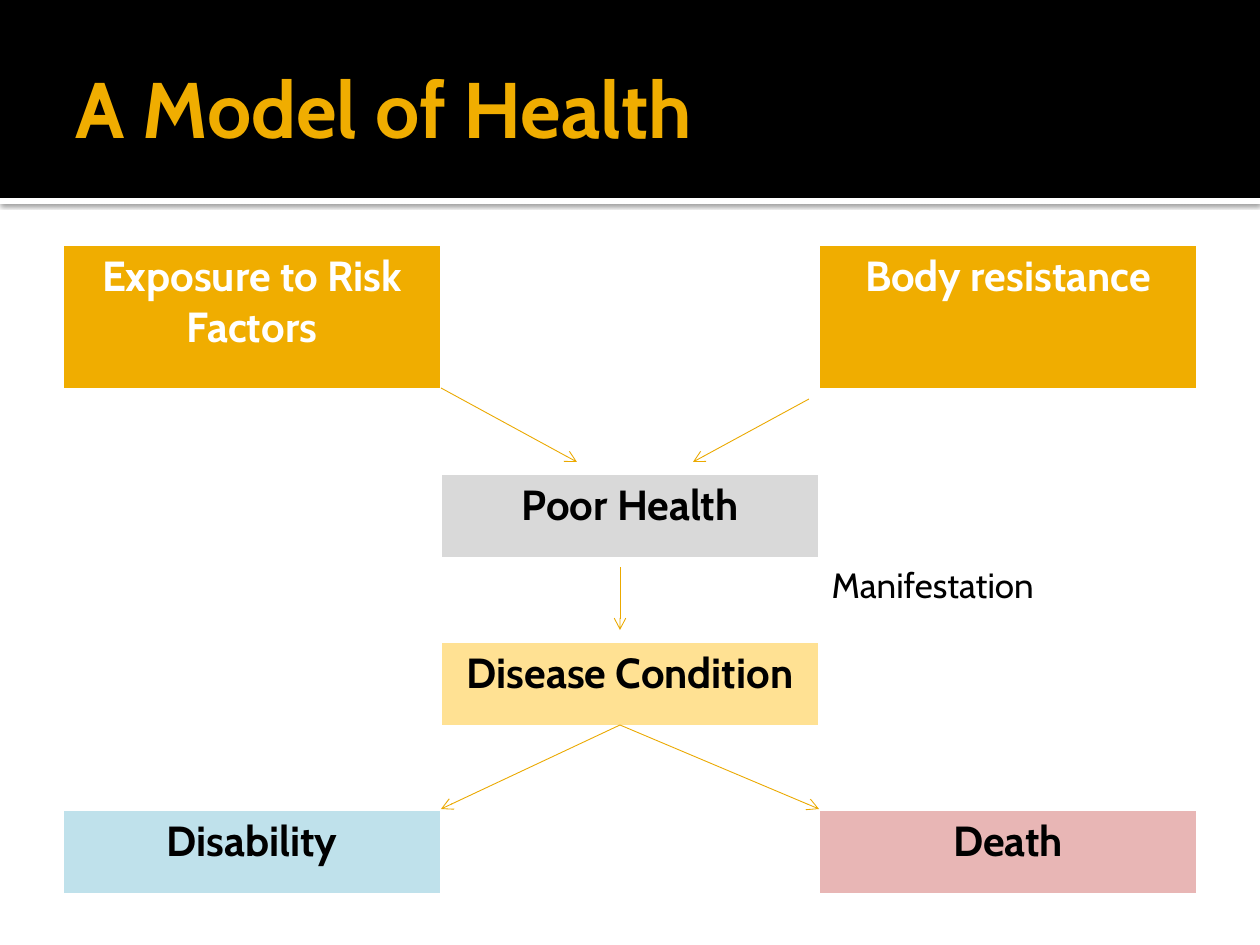
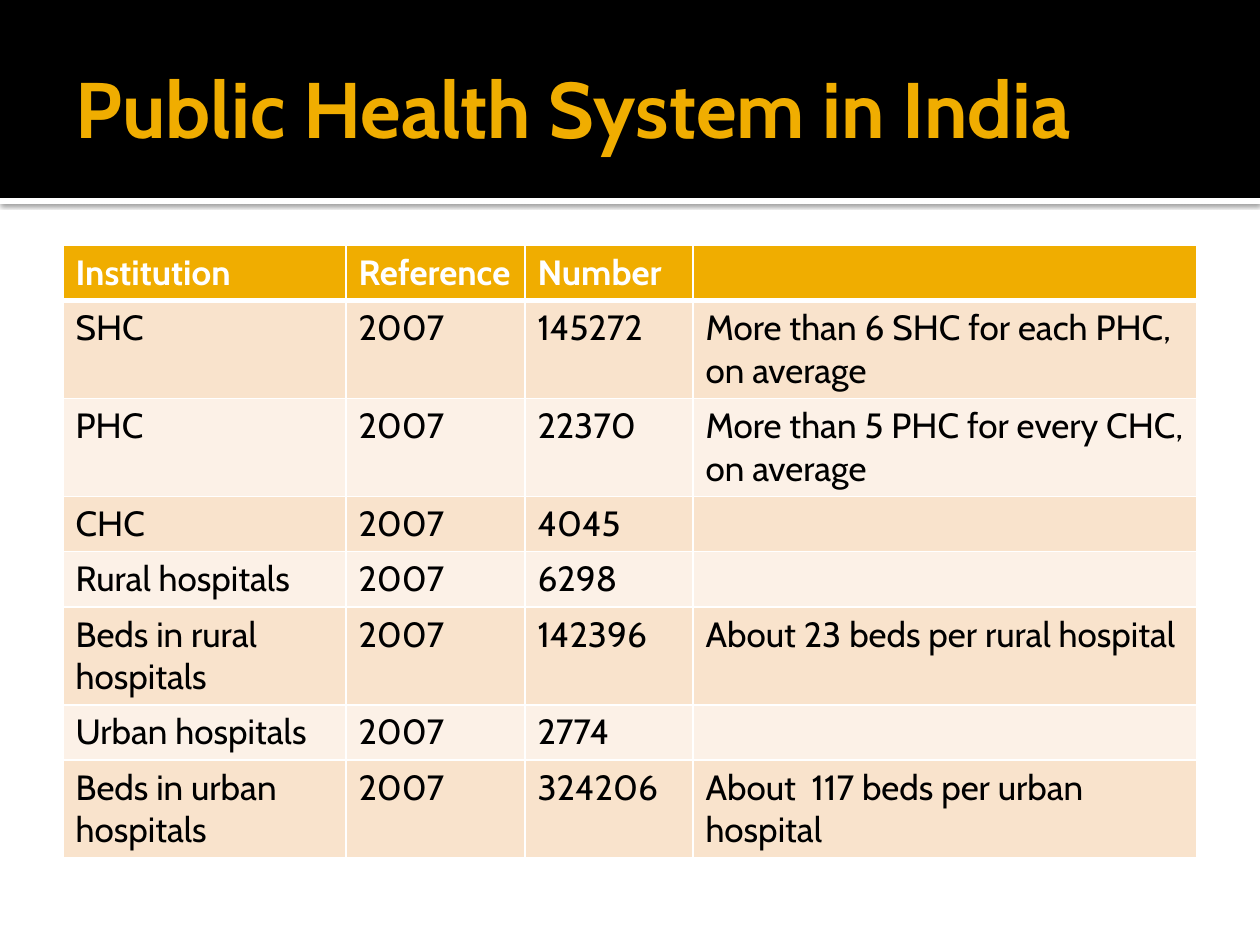
from dataclasses import dataclass

from lxml.etree import SubElement
from pptx import Presentation
from pptx.dml.color import RGBColor
from pptx.enum.shapes import MSO_CONNECTOR, MSO_SHAPE
from pptx.enum.text import MSO_ANCHOR, PP_ALIGN
from pptx.oxml.ns import qn
from pptx.util import Emu, Pt

PIXELS_PER_INCH = 126
FONT = "Cabin"
BLACK, WHITE, AMBER = "000000", "FFFFFF", "F0AD00"
ARROW_COLOUR = "EBA900"
BAND_COLOURS = ("F9E3CC", "FCF1E7")
PAGE_WIDTH, PAGE_HEIGHT = 1260, 945
TABLE_LEFT, TABLE_TOP = 63, 245
HEADER_HEIGHT = 198


@dataclass(frozen=True)
class Cell:
    text: str = ""
    fill: str | None = None
    colour: str = BLACK
    size: int = 20
    bold: bool = False
    align: PP_ALIGN = PP_ALIGN.LEFT


@dataclass(frozen=True)
class Arrow:
    start_x: int
    start_y: int
    end_x: int
    end_y: int


def px(length: int) -> Emu:
    return Emu(round(length * 914400 / PIXELS_PER_INCH))


def rgb(colour: str) -> RGBColor:
    return RGBColor.from_string(colour)


def style_font(font, size: int, colour: str, bold: bool) -> None:
    font.name, font.size, font.bold = FONT, Pt(size), bold
    font.color.rgb = rgb(colour)


def add_band(page, top: int, height: int, colour: str):
    band = page.shapes.add_shape(MSO_SHAPE.RECTANGLE, 0, px(top), px(PAGE_WIDTH), px(height))
    band.fill.solid()
    band.fill.fore_color.rgb = rgb(colour)
    band.line.fill.background()
    band.shadow.inherit = False
    return band


def add_shadow(band) -> None:
    effects = band.element.spPr.find(qn("a:effectLst"))
    shadow = SubElement(effects, qn("a:outerShdw"), blurRad=str(Pt(2.5)), dist=str(Pt(0.8)),
                        dir="5400000", algn="tl", rotWithShape="0")
    colour = SubElement(shadow, qn("a:srgbClr"), val=BLACK)
    SubElement(colour, qn("a:alpha"), val="60000")


def move_to_layout(bands: list, layout) -> None:
    first = layout.placeholders[0].element
    for number, band in enumerate(bands, start=20):
        band.element.nvSpPr.cNvPr.set("id", str(number))
        first.addprevious(band.element)


def set_title(page, text: str) -> None:
    title = page.shapes.title
    title.left, title.top, title.width, title.height = px(63), px(21), px(1134), px(173)
    frame = title.text_frame
    frame.text = text
    frame.vertical_anchor = MSO_ANCHOR.MIDDLE
    frame.margin_left = Emu(91440)
    frame.margin_right = frame.margin_top = frame.margin_bottom = Emu(45720)
    para = frame.paragraphs[0]
    para.alignment = PP_ALIGN.LEFT
    style_font(para.font, 45, AMBER, True)


def set_borders(table_cell, bottom_width: int) -> None:
    properties = table_cell._tc.get_or_add_tcPr()
    for side, width in (("L", 1), ("R", 1), ("T", 1), ("B", bottom_width)):
        line = SubElement(properties, qn(f"a:ln{side}"), w=str(Pt(width)))
        SubElement(SubElement(line, qn("a:solidFill")), qn("a:srgbClr"), val=WHITE)


def add_grid(page, widths: list[int], heights: list[int], rows: list[list[Cell]]) -> None:
    frame = page.shapes.add_table(len(heights), len(widths), px(TABLE_LEFT), px(TABLE_TOP),
                                  px(sum(widths)), px(sum(heights)))
    table = frame.table
    table.first_row = table.horz_banding = False
    for column, width in zip(table.columns, widths):
        column.width = px(width)
    for row, height in zip(table.rows, heights):
        row.height = px(height)
    for row_index, cells in enumerate(rows):
        for column_index, cell in enumerate(cells):
            box = table.cell(row_index, column_index)
            set_borders(box, 3 if row_index == 0 else 1)
            if cell.fill:
                box.fill.solid()
                box.fill.fore_color.rgb = rgb(cell.fill)
            else:
                box.fill.background()
            box.text = cell.text
            para = box.text_frame.paragraphs[0]
            para.alignment = cell.align
            style_font(para.font, cell.size, cell.colour, cell.bold)


def add_arrow(page, arrow: Arrow) -> None:
    connector = page.shapes.add_connector(MSO_CONNECTOR.STRAIGHT, px(arrow.start_x), px(arrow.start_y),
                                          px(arrow.end_x), px(arrow.end_y))
    connector.line.color.rgb = rgb(ARROW_COLOUR)
    connector.line.width = Pt(0.5)
    properties = connector.element.spPr
    SubElement(properties.find(qn("a:ln")), qn("a:tailEnd"), type="arrow")
    SubElement(properties, qn("a:effectLst"))


def stage(text: str, fill: str, colour: str = BLACK) -> Cell:
    return Cell(text, fill, colour, 24, True, PP_ALIGN.CENTER)


def build_health_model(page) -> None:
    set_title(page, "A Model of Health")
    gap = Cell()
    rows = [
        [stage("Exposure to Risk Factors", AMBER, WHITE), gap, stage("Body resistance", AMBER, WHITE)],
        [gap] * 3,
        [gap, stage("Poor Health", "D9D9D9"), gap],
        [gap, gap, Cell("Manifestation")],
        [gap, stage("Disease Condition", "FFE193"), gap],
        [gap] * 3,
        [stage("Disability", "BFE1EB"), gap, stage("Death", "E8B6B5")],
    ]
    add_grid(page, [378] * 3, [145] + [84] * 6, rows)
    for arrow in (
        Arrow(441, 388, 577, 462),
        Arrow(809, 399, 693, 462),
        Arrow(620, 567, 620, 630),
        Arrow(620, 725, 441, 809),
        Arrow(620, 725, 819, 809),
    ):
        add_arrow(page, arrow)


def build_institutions(page) -> None:
    set_title(page, "Public Health System in India")
    headings = ("Institution", "Reference", "Number", "")
    institutions = [
        ("SHC", "145272", "More than 6 SHC for each PHC, on average"),
        ("PHC", "22370", "More than 5 PHC for every CHC, on average"),
        ("CHC", "4045", ""),
        ("Rural hospitals", "6298", ""),
        ("Beds in rural hospitals", "142396", "About 23 beds per rural hospital"),
        ("Urban hospitals", "2774", ""),
        ("Beds in urban hospitals", "324206", "About  117 beds per urban hospital"),
    ]
    rows = [[Cell(text, AMBER, WHITE, bold=True) for text in headings]]
    for index, (name, number, remark) in enumerate(institutions):
        rows.append([Cell(text, BAND_COLOURS[index % 2]) for text in (name, "2007", number, remark)])
    one_line, two_lines = 54, 97
    heights = [one_line] + [two_lines if remark else one_line for _, _, remark in institutions]
    add_grid(page, [283, 179, 168, 504], heights, rows)


def main() -> None:
    deck = Presentation()
    deck.slide_width, deck.slide_height = px(PAGE_WIDTH), px(PAGE_HEIGHT)
    layout = deck.slide_layouts[5]
    model_page = deck.slides.add_slide(layout)
    rule = add_band(model_page, HEADER_HEIGHT, 6, WHITE)
    add_shadow(rule)
    header = add_band(model_page, 0, HEADER_HEIGHT, BLACK)
    move_to_layout([rule, header], layout)
    build_health_model(model_page)
    build_institutions(deck.slides.add_slide(layout))
    deck.save("out.pptx")


if __name__ == "__main__":
    main()
